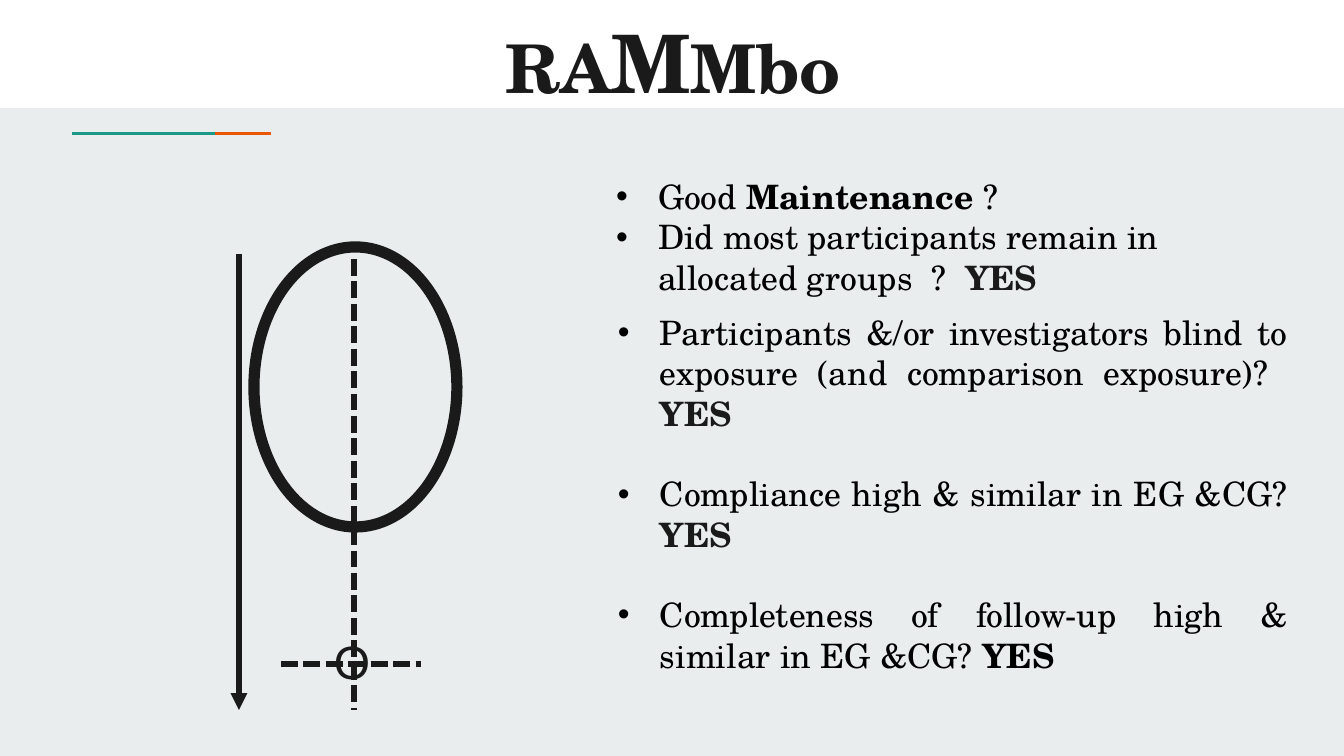
from pptx import Presentation
from pptx.dml.color import RGBColor
from pptx.enum.dml import MSO_LINE_DASH_STYLE as DASH
from pptx.enum.shapes import MSO_CONNECTOR, MSO_SHAPE
from pptx.enum.text import MSO_ANCHOR, MSO_AUTO_SIZE, PP_ALIGN
from pptx.oxml.ns import qn
from pptx.util import Pt
from lxml.etree import SubElement

W, H = 1344, 756
SCALE = 9144000 / W
SERIF = "TeX Gyre Schola"
INK, BLACK, WHITE = "1A1A1A", "000000", "FFFFFF"
TEAL, ORANGE, PALE = "1A9988", "EB5600", "E9EDEE"


def px(n):
    return round(n * SCALE)


def rgb(color):
    return RGBColor.from_string(color)


def add_run(p, text, size=18, color=BLACK, bold=False, font=SERIF):
    r = p.add_run()
    r.text = text
    r.font.size, r.font.bold, r.font.name = Pt(size), bold, font
    r.font.color.rgb = rgb(color)


def set_frame(tf, inset_x, inset_y, wrap=True):
    tf.word_wrap = wrap
    tf.auto_size = MSO_AUTO_SIZE.NONE
    tf.vertical_anchor = MSO_ANCHOR.TOP
    tf.margin_left = tf.margin_right = px(inset_x)
    tf.margin_top = tf.margin_bottom = px(inset_y)


def add_shape(slide, kind, box, fill=None, line=None, width=0):
    sp = slide.shapes.add_shape(kind, *map(px, box))
    sp.shadow.inherit = False
    if fill:
        sp.fill.solid()
        sp.fill.fore_color.rgb = rgb(fill)
    else:
        sp.fill.background()
    if line:
        sp.line.color.rgb = rgb(line)
        sp.line.width = Pt(width)
    else:
        sp.line.fill.background()
    return sp


def add_line(slide, x1, y1, x2, y2, dotted=False, arrow=False):
    cx = slide.shapes.add_connector(MSO_CONNECTOR.STRAIGHT, *map(px, (x1, y1, x2, y2)))
    cx.line.color.rgb = rgb(INK)
    cx.line.width = Pt(3)
    if dotted:
        cx.line.dash_style = DASH.SQUARE_DOT
    if arrow:
        SubElement(cx.line._get_or_add_ln(), qn("a:tailEnd"), type="triangle")
    SubElement(cx._element.spPr, qn("a:effectLst"))


def add_bullet(p):
    pPr = p._p.get_or_add_pPr()
    pPr.set("marL", str(px(42)))
    pPr.set("indent", str(-px(42)))
    clr = SubElement(pPr, qn("a:buClr"))
    SubElement(clr, qn("a:srgbClr"), val=BLACK)
    SubElement(pPr, qn("a:buFont"), typeface="Arial")
    SubElement(pPr, qn("a:buChar"), char="•")


def header(slide, x, y, w, h):
    # White band with a two-tone accent line below it
    add_shape(slide, MSO_SHAPE.RECTANGLE, (x, y, w, h), WHITE)
    for left, color in ((128, ORANGE), (72, TEAL)):
        add_shape(slide, MSO_SHAPE.RECTANGLE, (x + left, y + h + 24, 143, 3), color)

    # Title with one enlarged letter
    title = slide.shapes.title
    title.left, title.top, title.width, title.height = map(px, (x + 108, y, 1130, 121))
    set_frame(title.text_frame, 13, 13)
    p = title.text_frame.paragraphs[0]
    p.alignment = PP_ALIGN.CENTER
    for text, size in (("RA", 36), ("M", 43.2), ("Mbo", 36)):
        add_run(p, text, size=size, color=INK, bold=True)
    # Bring the title in front of the band
    slide.shapes._spTree.append(title._element)


def diagram(slide, x, y, w, h):
    axis = x + 115
    add_line(slide, x, y + 7, x, y + h, arrow=True)
    add_shape(slide, MSO_SHAPE.OVAL, (x + 15, y, w - 15, 280), line=INK, width=6)
    add_line(slide, axis, y + 12, axis, y + h, dotted=True)
    add_line(slide, x + 42, y + 417, x + 182, y + 417, dotted=True)
    # Outcome letter where the dotted lines cross
    tb = slide.shapes.add_textbox(*map(px, (x + 84, y + 381, 52, 67)))
    set_frame(tb.text_frame, 11, 5, wrap=False)
    add_run(tb.text_frame.paragraphs[0], "O", size=25, color=INK, font="Arial")


def bullet_list(slide, box, items, inset, align=PP_ALIGN.LEFT, gap=0):
    tb = slide.shapes.add_textbox(*map(px, box))
    tf = tb.text_frame
    set_frame(tf, *inset)
    for i, runs in enumerate(items):
        p = tf.paragraphs[0] if i == 0 else tf.add_paragraph()
        p.alignment = align
        p.space_before = Pt(gap if i else 0)
        add_bullet(p)
        for text, fmt in runs:
            add_run(p, text, **fmt)


def questions(slide, x, y, w, h):
    plain, bold = {}, {"bold": True}
    yes = ("YES", {"bold": True, "color": INK})
    bullet_list(slide, (x, y, 642, 133), [
        [("Good ", plain), ("Maintenance ", bold), ("?", plain)],
        [("Did most participants remain in allocated groups  ?  ", plain), yes],
    ], inset=(11, 5))
    bullet_list(slide, (x, y + 134, w, h - 134), [
        [("Participants &/or investigators blind to exposure "
          "(and comparison exposure)?  ", plain), yes],
        [("Compliance high & similar in EG &CG? ", plain), yes],
        [("Completeness of follow-up high & similar in EG &CG? ", plain), ("YES", bold)],
    ], inset=(13, 7), align=PP_ALIGN.JUSTIFY, gap=21.6)


def main():
    prs = Presentation()
    prs.slide_width, prs.slide_height = px(W), px(H)
    slide = prs.slides.add_slide(prs.slide_layouts[5])
    slide.background.fill.solid()
    slide.background.fill.fore_color.rgb = rgb(PALE)
    header(slide, 0, 0, W, 108)
    diagram(slide, 239, 247, 218, 463)
    questions(slide, 605, 171, 696, 545)
    prs.save("out.pptx")


if __name__ == "__main__":
    main()
